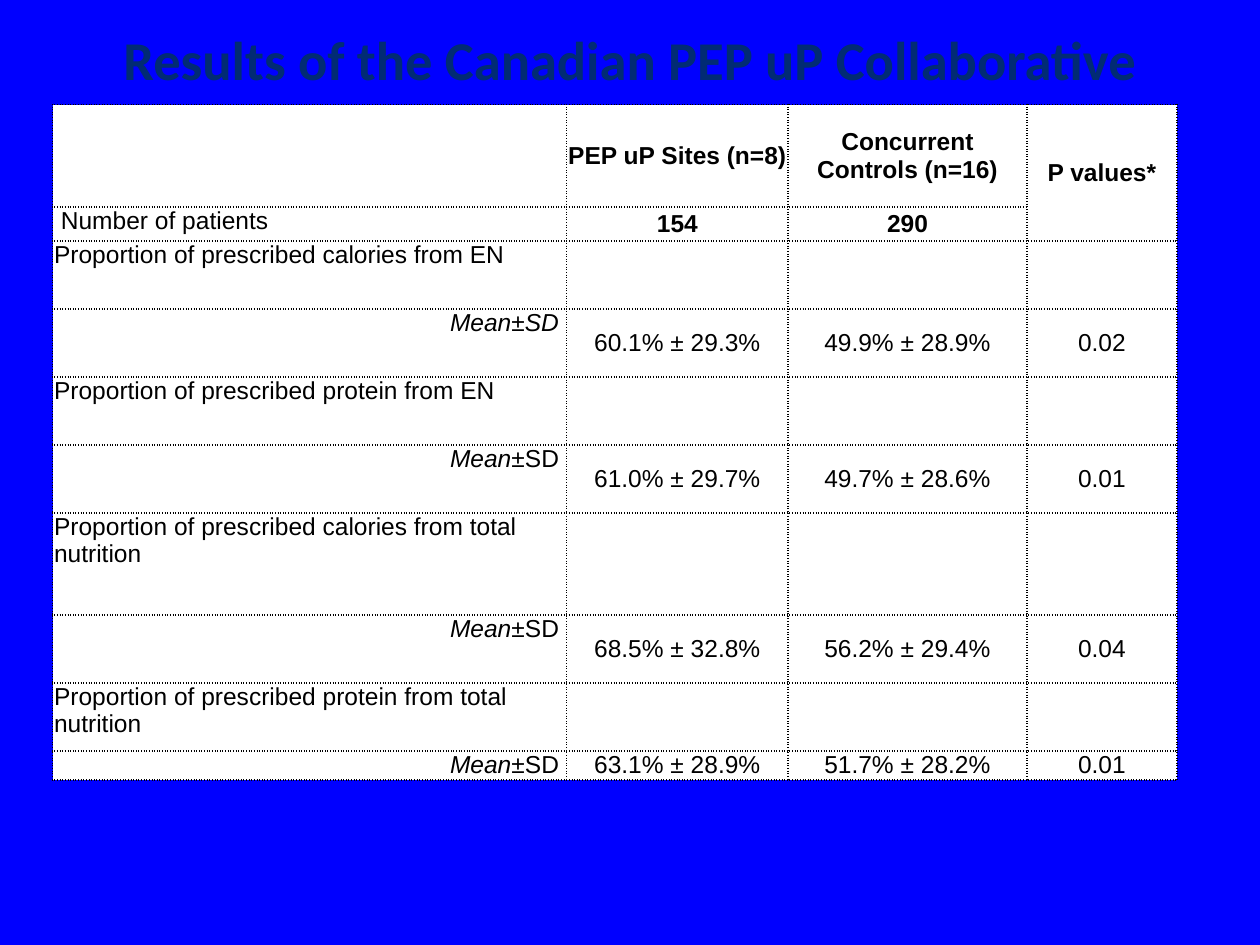
"""Build the slide with the results table of the PEP uP Collaborative."""
from dataclasses import dataclass
from lxml.etree import SubElement as Sub
from pptx import Presentation
from pptx.dml.color import RGBColor as Rgb
from pptx.enum.text import MSO_ANCHOR as Anchor, MSO_AUTO_SIZE as Fit, PP_ALIGN as Align
from pptx.oxml import parse_xml
from pptx.util import Cm, Pt


@dataclass
class Theme:
    back: str = "0000FF"
    head: str = "012B74"
    ink: str = "000000"
    cell: str = "FFFFFF"
    face: str = "Arial"
    title: str = "Calibri"
    big: float = 31.2
    body: float = 14


theme = Theme()
NS = "http://schemas.openxmlformats.org/drawingml/2006/main"


def write(frame, text, size=theme.body, face=theme.face, color=theme.ink,
          bold=False, slant=False, align=Align.LEFT, anchor=Anchor.TOP):
    frame.vertical_anchor = anchor
    para = frame.paragraphs[0]
    para.alignment = align
    run = para.add_run()
    run.text = text
    font = run.font
    font.size, font.name, font.bold, font.italic = Pt(size), face, bold, slant
    font.color.rgb = Rgb.from_string(color)
    return para


def border(cell):
    props = cell._tc.get_or_add_tcPr()
    for spot, side in enumerate("LRTB"):
        line = parse_xml(f'<a:ln{side} xmlns:a="{NS}" w="12700"/>')
        paint = Sub(line, f"{{{NS}}}solidFill")
        Sub(paint, f"{{{NS}}}srgbClr", val=theme.ink)
        Sub(line, f"{{{NS}}}prstDash", val="dot")
        props.insert(spot, line)


deck = Presentation()
deck.slide_width, deck.slide_height = Cm(25.4), Cm(19.05)
slide = deck.slides.add_slide(deck.slide_layouts[5])
slide.background.fill.solid()
slide.background.fill.fore_color.rgb = Rgb.from_string(theme.back)

title = slide.shapes.title
title.left, title.top, title.width, title.height = Cm(0), Cm(0), Cm(25.4), Cm(2.54)
title.text_frame.auto_size = Fit.NONE
para = write(title.text_frame, "Results of the Canadian PEP uP Collaborative",
             size=theme.big, face=theme.title, color=theme.head, bold=True,
             align=Align.CENTER, anchor=Anchor.MIDDLE)
para.line_spacing = 0.9

heads = ["", "PEP uP Sites (n=8)", "Concurrent Controls (n=16)", "P values*"]
counts = [" Number of patients", "154", "290", ""]
groups = [
    ("calories from EN", "60.1% ± 29.3%", "49.9% ± 28.9%", "0.02"),
    ("protein from EN", "61.0% ± 29.7%", "49.7% ± 28.6%", "0.01"),
    ("calories from total nutrition", "68.5% ± 32.8%", "56.2% ± 29.4%", "0.04"),
    ("protein from total nutrition", "63.1% ± 28.9%", "51.7% ± 28.2%", "0.01"),
]
rows = [heads, counts]
for name, *stats in groups:
    rows += [[f"Proportion of prescribed {name}", "", "", ""], ["Mean", *stats]]

widths = [10.36, 4.47, 4.81, 3.03]
heights = [2.06, 0.69, 1.37, 1.37, 1.37, 1.37, 2.06, 1.37, 1.37, 0.58]
table = slide.shapes.add_table(len(rows), len(widths), Cm(1.06), Cm(2.11),
                               Cm(sum(widths)), Cm(sum(heights))).table
table.first_row = table.horz_banding = False
for col, width in zip(table.columns, widths):
    col.width = Cm(width)
for row, height in zip(table.rows, heights):
    row.height = Cm(height)

for r, texts in enumerate(rows):
    for c, text in enumerate(texts):
        cell = table.cell(r, c)
        cell.margin_left = cell.margin_right = Cm(0.03)
        cell.margin_top = cell.margin_bottom = Cm(0)
        cell.fill.solid()
        cell.fill.fore_color.rgb = Rgb.from_string(theme.cell)
        border(cell)
        if c == 0 and r > 1:
            cell.margin_right = Cm(0.15)
        if text == "Mean":
            write(cell.text_frame, text, slant=True, align=Align.RIGHT)
            write(cell.text_frame, "±SD", slant=r == 3, align=Align.RIGHT)
        elif text and c == 0:
            write(cell.text_frame, text)
        elif text:
            write(cell.text_frame, text, bold=r < 2, align=Align.CENTER)
            cell.vertical_anchor = Anchor.MIDDLE
table.cell(0, 3).merge(table.cell(1, 3))

deck.save("out.pptx")
